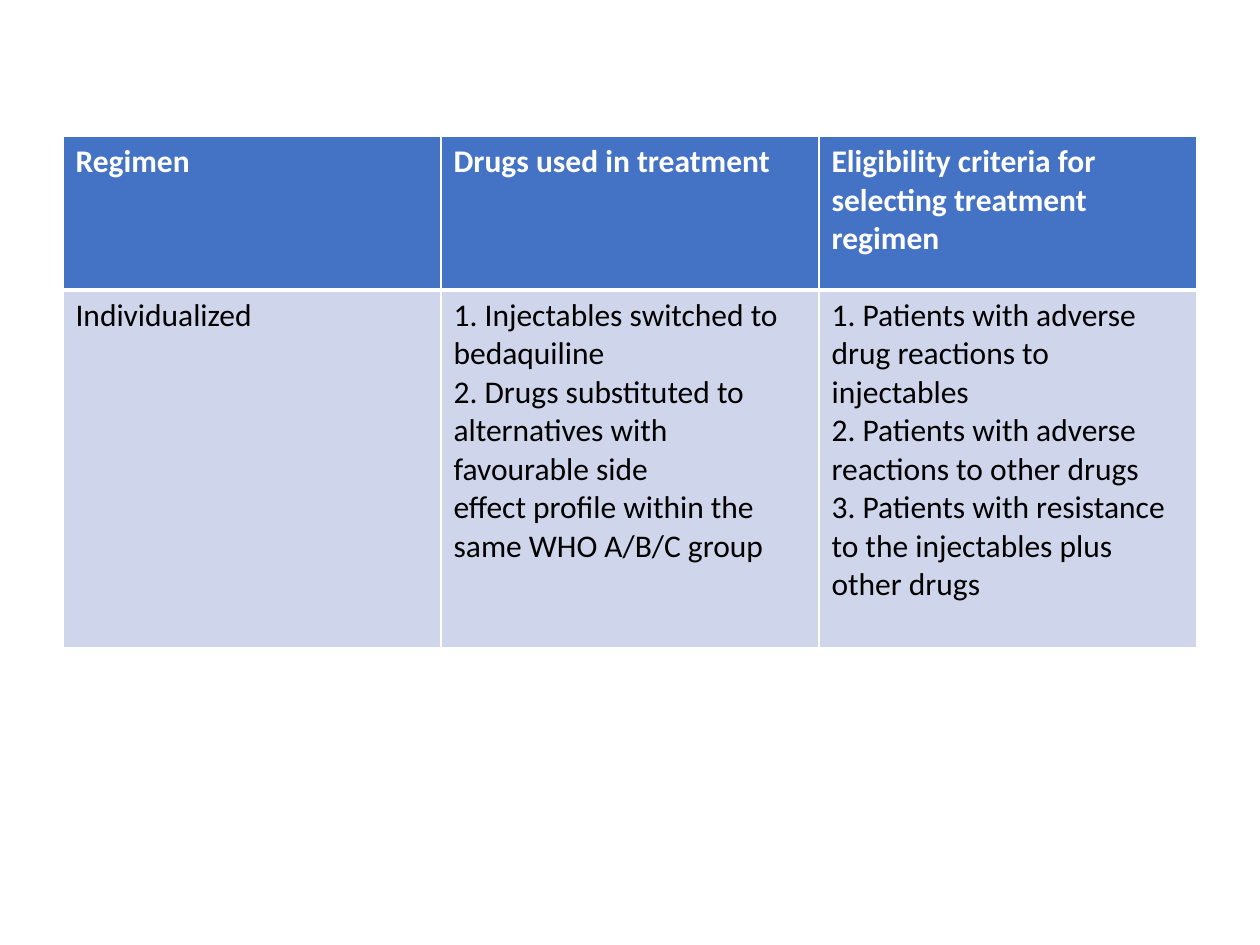
from lxml import etree
from pptx import Presentation
from pptx.dml.color import RGBColor
from pptx.oxml.ns import qn
from pptx.util import Pt

WHITE = RGBColor(0xFF, 0xFF, 0xFF)
BLACK = RGBColor(0x00, 0x00, 0x00)
HEADER_BLUE = RGBColor(0x44, 0x72, 0xC4)
BODY_BLUE = RGBColor(0xCF, 0xD5, 0xEA)
BLANK_LAYOUT = 6

HEADINGS = [
    ["Regimen"],
    ["Drugs used in treatment"],
    ["Eligibility criteria for selecting treatment regimen"],
]
INDIVIDUALIZED = [
    ["Individualized"],
    [
        "1. Injectables switched to bedaquiline",
        "2. Drugs substituted to alternatives with favourable side",
        "effect profile within the same WHO A/B/C group",
    ],
    [
        "1. Patients with adverse drug reactions to injectables",
        "2. Patients with adverse reactions to other drugs",
        "3. Patients with resistance to the injectables plus other drugs",
    ],
]


def write_text(frame, lines, *, font, size, color, bold=False):
    """Fill a text frame with one paragraph per line."""
    for index, line in enumerate(lines):
        paragraph = frame.paragraphs[0] if index == 0 else frame.add_paragraph()
        run = paragraph.add_run()
        run.text = line
        run.font.name = font
        run.font.size = Pt(size)
        run.font.bold = bold
        run.font.color.rgb = color


def set_borders(cell, color, **widths):
    """Draw cell borders; widths are points keyed by side: L, R, T, B."""
    properties = cell._tc.get_or_add_tcPr()
    for position, (side, width) in enumerate(widths.items()):
        border = etree.Element(qn(f"a:ln{side}"), w=str(Pt(width)))
        fill = etree.SubElement(border, qn("a:solidFill"))
        etree.SubElement(fill, qn("a:srgbClr"), val=str(color))
        properties.insert(position, border)


class RegimenSlide:
    font = "Calibri"
    size = 18

    def __init__(self, presentation):
        layout = presentation.slide_layouts[BLANK_LAYOUT]
        self.slide = presentation.slides.add_slide(layout)

    def table(self, rows, left, top, column_width, row_heights):
        column_count = len(rows[0])
        table = self.slide.shapes.add_table(
            len(rows), column_count, Pt(left), Pt(top),
            Pt(column_width * column_count), Pt(sum(row_heights)),
        ).table
        for row_index, (contents, height) in enumerate(zip(rows, row_heights)):
            table.rows[row_index].height = Pt(height)
            for column_index, lines in enumerate(contents):
                cell = table.cell(row_index, column_index)
                self.cell(cell, lines, header=row_index == 0)

    def cell(self, cell, lines, header):
        cell.fill.solid()
        cell.fill.fore_color.rgb = HEADER_BLUE if header else BODY_BLUE
        write_text(cell.text_frame, lines, font=self.font, size=self.size,
                   color=WHITE if header else BLACK, bold=header)
        set_borders(cell, WHITE, L=1, R=1, T=3 if not header else 1,
                    B=3 if header else 1)


def main():
    presentation = Presentation()
    presentation.slide_width = Pt(720)
    presentation.slide_height = Pt(540)
    slide = RegimenSlide(presentation)
    slide.table([HEADINGS, INDIVIDUALIZED], left=36, top=78,
                column_width=216, row_heights=[87.8, 204.5])
    presentation.save("out.pptx")


if __name__ == "__main__":
    main()
